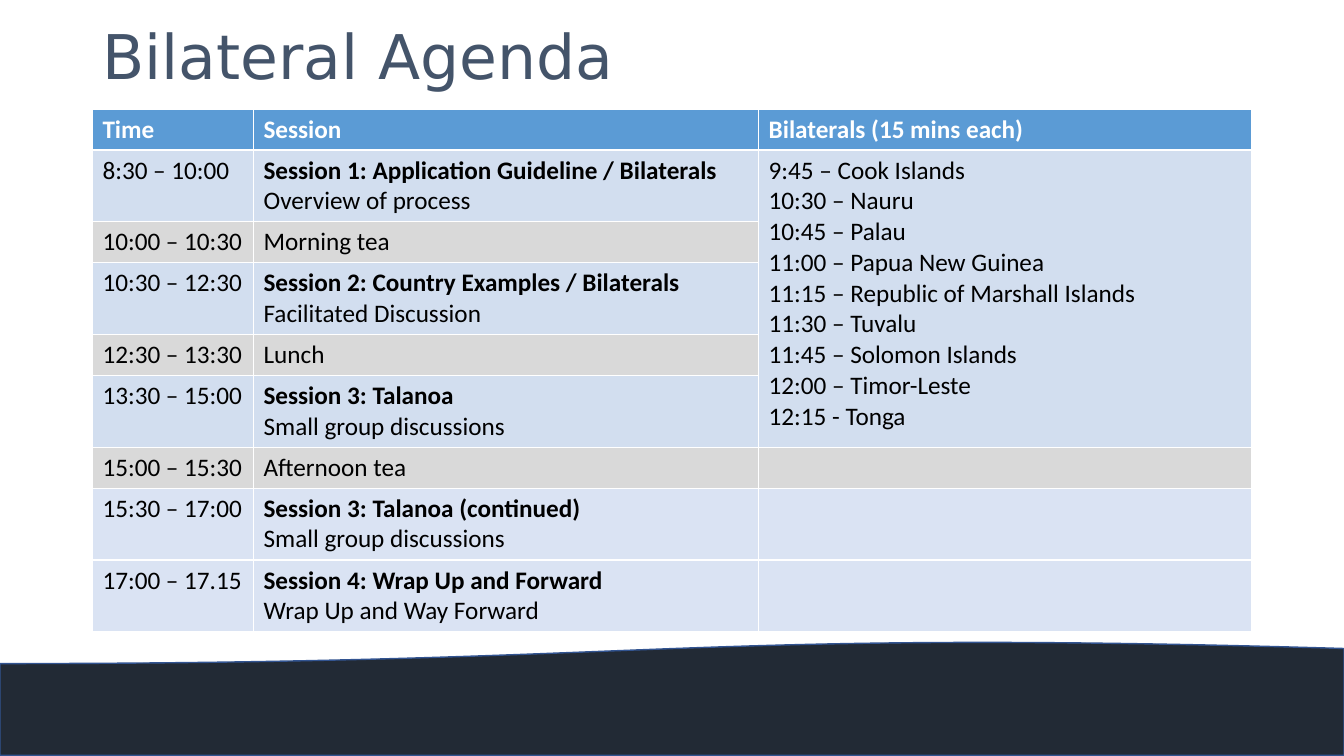
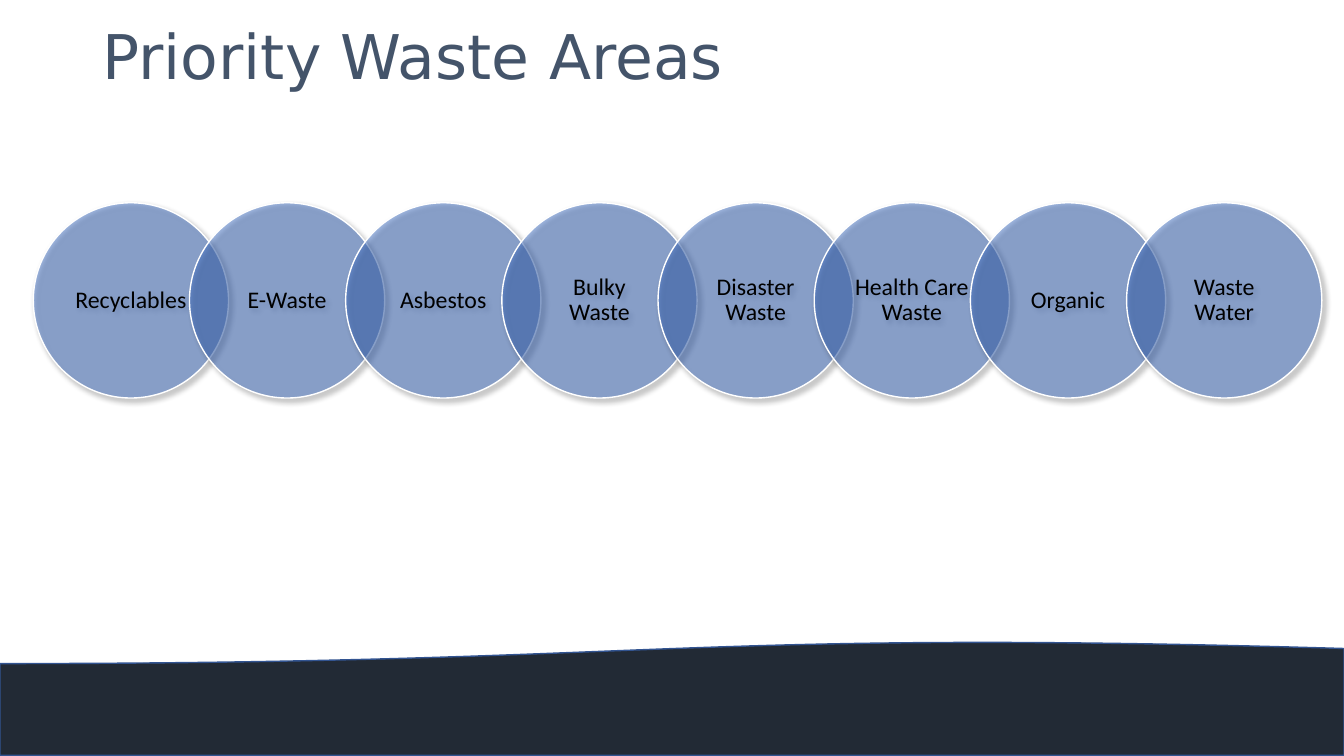
import lxml.etree
import pptx
import pptx.dml.color
import pptx.enum.shapes
import pptx.enum.text
import pptx.oxml.ns
import pptx.util

Cm = pptx.util.Cm
Pt = pptx.util.Pt
SHAPE = pptx.enum.shapes.MSO_SHAPE
MIDDLE = pptx.enum.text.MSO_ANCHOR.MIDDLE

BODY_FONT = "Calibri"
TITLE_FONT = "DejaVu Sans"
SLIDE_WIDTH = Cm(33.87)
MARGIN = Cm(2.33)
CONTENT_WIDTH = Cm(29.21)

HEADER_BLUE = "5B9BD5"
SESSION_BLUE = "D2DEEF"
BREAK_GREY = "D9D9D9"
LATE_BLUE = "DAE3F3"


def color(hex_code):
    return pptx.dml.color.RGBColor.from_string(hex_code)


def add_titled_slide(title):
    """Add a blank slide with the dark wave at the bottom and a title."""
    slide = deck.slides.add_slide(deck.slide_layouts[6])
    wave = slide.shapes.add_shape(
        SHAPE.FLOWCHART_DOCUMENT, 0, Cm(16.15), SLIDE_WIDTH, Cm(2.88))
    wave.rotation = 180
    wave.shadow.inherit = False
    wave.fill.solid()
    wave.fill.fore_color.rgb = color("222A35")
    wave.line.color.rgb = color("325491")
    wave.line.width = Pt(1)

    heading = slide.shapes.add_textbox(
        MARGIN, Cm(0.28), CONTENT_WIDTH, Cm(2.46)).text_frame
    heading.word_wrap = True
    heading.vertical_anchor = MIDDLE
    heading.text = title
    paragraph = heading.paragraphs[0]
    paragraph.line_spacing = 0.9
    paragraph.font.name = TITLE_FONT
    paragraph.font.size = Pt(44)
    paragraph.font.color.rgb = color("44546A")
    return slide


deck = pptx.Presentation()
deck.slide_width = SLIDE_WIDTH
deck.slide_height = Cm(19.05)

# Agenda
bilaterals = "\n".join([
    "9:45 – Cook Islands",
    "10:30 – Nauru",
    "10:45 – Palau",
    "11:00 – Papua New Guinea",
    "11:15 – Republic of Marshall Islands",
    "11:30 – Tuvalu",
    "11:45 – Solomon Islands",
    "12:00 – Timor-Leste",
    "12:15 - Tonga",
])
agenda_rows = [
    (HEADER_BLUE, "Time", "Session", "Bilaterals (15 mins each)"),
    (SESSION_BLUE, "8:30 – 10:00",
     "Session 1: Application Guideline / Bilaterals\nOverview of process", bilaterals),
    (BREAK_GREY, "10:00 – 10:30", "Morning tea", ""),
    (SESSION_BLUE, "10:30 – 12:30",
     "Session 2: Country Examples / Bilaterals\nFacilitated Discussion", ""),
    (BREAK_GREY, "12:30 – 13:30", "Lunch", ""),
    (SESSION_BLUE, "13:30 – 15:00", "Session 3: Talanoa\nSmall group discussions", ""),
    (BREAK_GREY, "15:00 – 15:30", "Afternoon tea", ""),
    (LATE_BLUE, "15:30 – 17:00",
     "Session 3: Talanoa (continued)\nSmall group discussions", ""),
    (LATE_BLUE, "17:00 – 17.15",
     "Session 4: Wrap Up and Forward\nWrap Up and Way Forward", ""),
]

agenda_slide = add_titled_slide("Bilateral Agenda")
agenda = agenda_slide.shapes.add_table(
    len(agenda_rows), 3, MARGIN, Cm(2.75), CONTENT_WIDTH, Cm(13)).table
agenda.horz_banding = False
for column, width in zip(agenda.columns, (4.06, 12.73, 12.42)):
    column.width = Cm(width)

for row_index, (row_fill, *texts) in enumerate(agenda_rows):
    is_header = row_index == 0
    has_session = "\n" in texts[1]
    agenda.rows[row_index].height = Cm(1.81 if has_session else 1.03)
    for column_index, text in enumerate(texts):
        cell = agenda.cell(row_index, column_index)
        cell.fill.solid()
        cell.fill.fore_color.rgb = color(row_fill)
        cell.text_frame.text = text
        for line_index, paragraph in enumerate(cell.text_frame.paragraphs):
            is_session_name = has_session and column_index == 1 and line_index == 0
            paragraph.font.name = BODY_FONT
            paragraph.font.size = Pt(18)
            paragraph.font.bold = is_header or is_session_name
            paragraph.font.color.rgb = color("FFFFFF" if is_header else "000000")
agenda.cell(1, 2).merge(agenda.cell(5, 2))

# Priority waste areas
waste_areas = ["Recyclables", "E-Waste", "Asbestos", "Bulky Waste", "Disaster Waste",
               "Health Care Waste", "Organic", "Waste Water"]
diameter = Cm(4.92)
pitch = int(diameter * 0.8)
qn = pptx.oxml.ns.qn

waste_slide = add_titled_slide("Priority Waste Areas")
for index, area in enumerate(waste_areas):
    circle = waste_slide.shapes.add_shape(
        SHAPE.OVAL, Cm(0.84) + index * pitch, Cm(5.11), diameter, diameter)
    circle.fill.solid()
    circle.fill.fore_color.rgb = color("4472C4")
    circle.line.color.rgb = color("FFFFFF")
    circle.line.width = Pt(1)

    # Half-transparent fill and a soft shadow to the lower right
    fill_color = circle.fill._xPr.find(".//" + qn("a:srgbClr"))
    lxml.etree.SubElement(fill_color, qn("a:alpha"), val="50000")
    circle.shadow.inherit = False
    effects = circle._element.spPr.find(qn("a:effectLst"))
    shadow = lxml.etree.SubElement(
        effects, qn("a:outerShdw"), blurRad=str(Pt(4)), dist=str(Pt(3)),
        dir="2700000", algn="tl", rotWithShape="0")
    shadow_color = lxml.etree.SubElement(shadow, qn("a:srgbClr"), val="000000")
    lxml.etree.SubElement(shadow_color, qn("a:alpha"), val="40000")

    label = circle.text_frame
    label.word_wrap = True
    label.vertical_anchor = MIDDLE
    label.margin_left = label.margin_right = Cm(0.27)
    label.margin_top = label.margin_bottom = Cm(0.05)
    label.text = area
    paragraph = label.paragraphs[0]
    paragraph.alignment = pptx.enum.text.PP_ALIGN.CENTER
    paragraph.line_spacing = 0.9
    paragraph.font.name = BODY_FONT
    paragraph.font.size = Pt(17)
    paragraph.font.color.rgb = color("000000")

deck.save("out.pptx")
